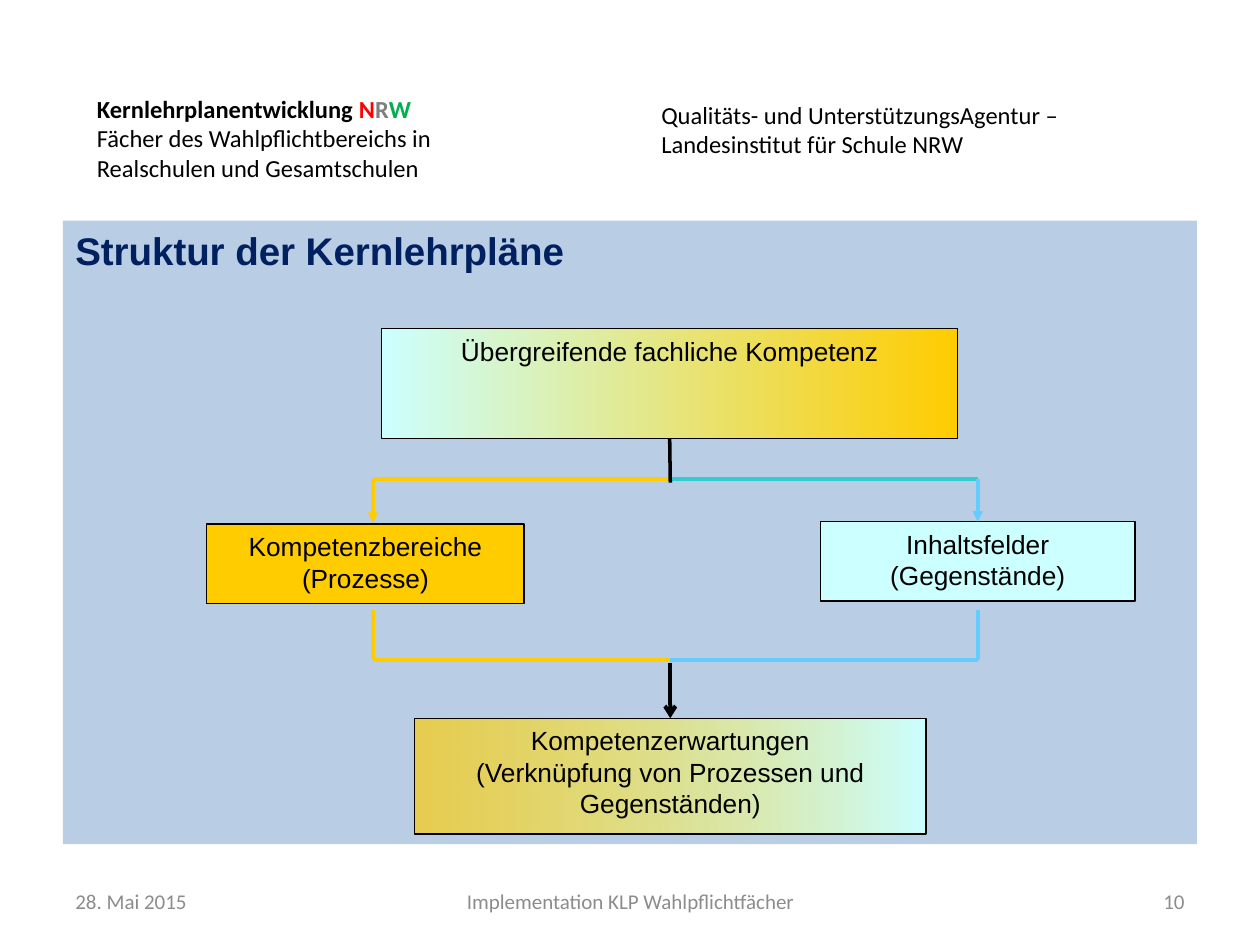
from lxml import etree
from pptx import Presentation, util as u
from pptx.dml.color import RGBColor
from pptx.enum import shapes, text
from pptx.oxml.ns import qn

T = dict(
    black="000000", gray="8C8C8C", navy="002060", panel="B9CDE5",
    gold="FFCC00", ice="CCFFFF", teal="33CCCC", sky="66CCFF",
    nrw=("FF0000", "7F7F7F", "00B050"),
    head="Calibri", body="Arial",
    title=22, box=15, header=14, footer=12, edge=0.75, wire=2, arrow=2.25,
)
LEFT, CENTER, RIGHT = text.PP_ALIGN.LEFT, text.PP_ALIGN.CENTER, text.PP_ALIGN.RIGHT
TOP, MIDDLE = text.MSO_ANCHOR.TOP, text.MSO_ANCHOR.MIDDLE

prs = Presentation()
prs.slide_width, prs.slide_height = u.Inches(10), u.Inches(7.5)
s = prs.slides.add_slide(prs.slide_layouts[6])

# Grid of 100 columns by 75 rows
col, row = prs.slide_width / 100, prs.slide_height / 75


def add_box(at, lines, size, font, color, align=LEFT, anchor=TOP, filled=True):
    x, y, w, h = at
    area = int(x * col), int(y * row), int(w * col), int(h * row)
    if filled:
        sp = s.shapes.add_shape(shapes.MSO_SHAPE.RECTANGLE, *area)
        sp.shadow.inherit = False
        sp.line.fill.background()
    else:
        sp = s.shapes.add_textbox(*area)
    tf = sp.text_frame
    tf.text = "\n".join(lines)
    tf.word_wrap = True
    tf.vertical_anchor = anchor
    for p in tf.paragraphs:
        p.alignment = align
        for r in p.runs:
            r.font.size, r.font.name = u.Pt(size), font
            r.font.color.rgb = RGBColor.from_string(color)
    return sp


def add_line(start, end, color, width=T["wire"], tail=None):
    cx = s.shapes.add_connector(
        shapes.MSO_CONNECTOR.STRAIGHT,
        int(start[0] * col), int(start[1] * row), int(end[0] * col), int(end[1] * row))
    cx.line.color.rgb = RGBColor.from_string(color)
    cx.line.width = u.Pt(width)
    if tail:
        etree.SubElement(cx.line._ln, qn("a:tailEnd"), type=tail)
    etree.SubElement(cx._element.spPr, qn("a:effectLst"))
    return cx


# Header
sp = add_box((6.7, 4.7, 33.9, 12.5),
             ["Kernlehrplanentwicklung ", "Fächer des Wahlpflichtbereichs in",
              "Realschulen und Gesamtschulen"],
             T["header"], T["head"], T["black"], anchor=MIDDLE, filled=False)
p = sp.text_frame.paragraphs[0]
for letter, color in zip("NRW", T["nrw"]):
    r = p.add_run()
    r.text = letter
    r.font.size, r.font.name = u.Pt(T["header"]), T["head"]
    r.font.color.rgb = RGBColor.from_string(color)
for r in p.runs:
    r.font.bold = True
add_box((51.5, 4, 34, 12.5),
        ["Qualitäts- und UnterstützungsAgentur –", "Landesinstitut für Schule NRW"],
        T["header"], T["head"], T["black"], anchor=MIDDLE, filled=False)

# Panel with title
sp = add_box((5, 17.5, 90, 49.5), ["Struktur der Kernlehrpläne"],
             T["title"], T["body"], T["navy"])
sp.fill.solid()
sp.fill.fore_color.rgb = RGBColor.from_string(T["panel"])
sp.text_frame.paragraphs[0].runs[0].font.bold = True

# Boxes: place, lines, colours from left to right, opacity of the first colour
boxes = {}
for name, at, lines, colors, opacity in [
    ("goal", (30.3, 26.1, 45.7, 8.7), ["Übergreifende fachliche Kompetenz"],
     (T["ice"], T["gold"]), 100),
    ("processes", (16.4, 41.6, 25.2, 6.3), ["Kompetenzbereiche", "(Prozesse)"],
     (T["gold"],), 100),
    ("contents", (65.1, 41.4, 25, 6.3), ["Inhaltsfelder", "(Gegenstände)"],
     (T["ice"],), 100),
    ("outcomes", (32.9, 57, 40.6, 9.2),
     ["Kompetenzerwartungen", "(Verknüpfung von Prozessen und Gegenständen)"],
     (T["gold"], T["ice"]), 65),
]:
    sp = boxes[name] = add_box(at, lines, T["box"], T["body"], T["black"], CENTER)
    sp.line.color.rgb = RGBColor.from_string(T["black"])
    sp.line.width = u.Pt(T["edge"])
    if len(colors) == 1:
        sp.fill.solid()
        sp.fill.fore_color.rgb = RGBColor.from_string(colors[0])
        continue
    sp.fill.gradient()
    sp.fill.gradient_angle = 0
    for i, (stop, color) in enumerate(zip(sp.fill.gradient_stops, colors)):
        stop.position = i
        stop.color.rgb = RGBColor.from_string(color)
    if opacity < 100:
        first = sp._element.spPr.find(".//" + qn("a:srgbClr"))
        etree.SubElement(first, qn("a:alpha"), val=str(opacity * 1000))

# Branches between the boxes
trunk, left, right = 53.2, 29.6, 77.6
split, merge = 38, 52.4
add_line((trunk, split), (left, split), T["gold"])
add_line((trunk, split), (right, split), T["teal"])
add_line((left, split), (left, 41.5), T["gold"], tail="triangle")
cx = add_line((right, split), (right, 41.4), T["sky"], tail="triangle")
cx.end_connect(boxes["contents"], 0)
for x, color in [(left, T["gold"]), (right, T["sky"])]:
    add_line((x, 48.4), (x, merge), color)
    add_line((x, merge), (trunk, merge), color)

# Trunk
cx = add_line((trunk, 34.8), (trunk, 38.3), T["black"])
cx.begin_connect(boxes["goal"], 2)
cx = add_line((trunk, 52.6), (trunk, 57), T["black"], T["arrow"], "arrow")
cx.end_connect(boxes["outcomes"], 0)

# Footer
for x, w, words, align in [
    (5, 23.3, "28. Mai 2015", LEFT),
    (34.2, 31.7, "Implementation KLP Wahlpflichtfächer", CENTER),
    (71.7, 23.3, "10", RIGHT),
]:
    add_box((x, 69.5, w, 4), [words], T["footer"], T["head"], T["gray"],
            align, MIDDLE, filled=False)

prs.save("out.pptx")
